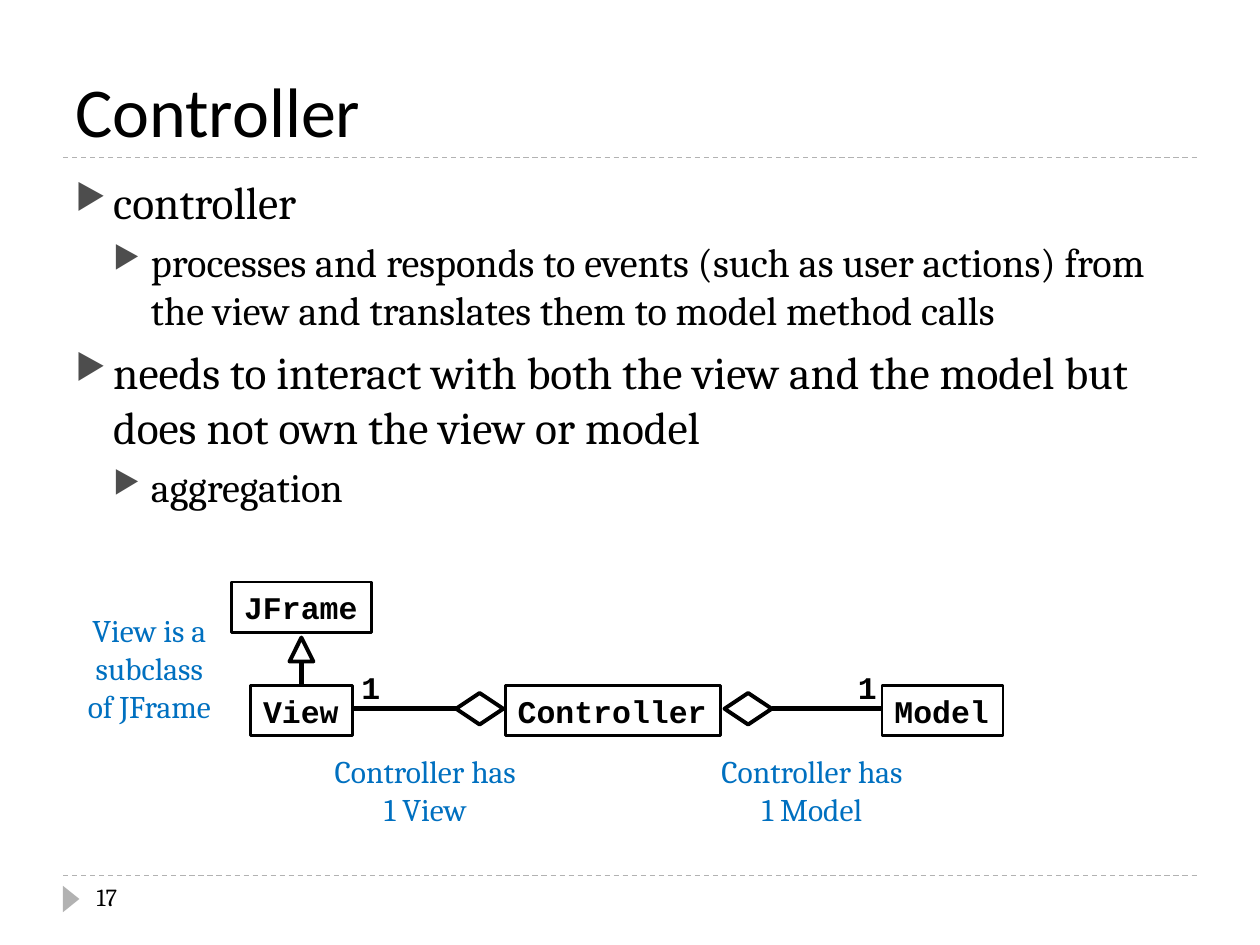
from dataclasses import dataclass

from lxml.etree import SubElement
from pptx import Presentation
from pptx.dml.color import RGBColor
from pptx.enum.dml import MSO_LINE
from pptx.enum.shapes import MSO_CONNECTOR, MSO_SHAPE
from pptx.enum.text import MSO_ANCHOR, MSO_AUTO_SIZE, PP_ALIGN
from pptx.oxml.ns import qn
from pptx.util import Pt


@dataclass(frozen=True)
class Theme:
    ink: str = "000000"
    paper: str = "FFFFFF"
    rule: str = "B2B2B2"
    bullet: str = "4D4D4D"
    note: str = "0070C0"
    heading_font: str = "Calibri"
    body_font: str = "Cambria"
    code_font: str = "Courier New"
    title_size: float = 40
    level_sizes: tuple = (26, 23)
    level_gaps: tuple = (6, 5)
    diagram_size: float = 18
    number_size: float = 14


@dataclass(frozen=True)
class Area:
    left: float
    top: float
    width: float
    height: float

    def lengths(self) -> list:
        return [Pt(value) for value in (self.left, self.top, self.width, self.height)]


@dataclass(frozen=True)
class Label:
    text: str
    area: Area


THEME = Theme()
INDENT = 21.6
BOX_TOP, BOX_HEIGHT = 391.7, 28.8
LINK_Y = 405
DIAMOND_WIDTH, DIAMOND_HEIGHT = 27, 18

BULLETS = [
    (0, "controller"),
    (1, "processes and responds to events (such as user actions) from "
        "the view and translates them to model method calls"),
    (0, "needs to interact with both the view and the model but "
        "does not own the view or model"),
    (1, "aggregation"),
]
CLASSES = [
    Label("JFrame", Area(132.4, 332.6, 80, BOX_HEIGHT)),
    Label("View", Area(143.2, BOX_TOP, 58.3, BOX_HEIGHT)),
    Label("Controller", Area(288.7, BOX_TOP, 123.1, BOX_HEIGHT)),
    Label("Model", Area(504, BOX_TOP, 69.1, BOX_HEIGHT)),
]
COUNTS = [Label("1", Area(left, 378, 25.2, BOX_HEIGHT)) for left in (199.4, 483.1)]
NOTES = [
    Label("View is a\nsubclass\nof JFrame", Area(40.3, 345.6, 90, 72.7)),
    Label("Controller has\n1 View", Area(180, 426.2, 126, 51.1)),
    Label("Controller has\n1 Model", Area(401, 426.2, 126, 51.1)),
]
# Diamond left edge, then the ends of its line
LINKS = [(260.6, 260.6, 202.3), (414, 441, 504)]


def write(para, text: str, *, size: float, font: str = THEME.body_font,
          color: str = THEME.ink, bold: bool = False, align=PP_ALIGN.LEFT) -> None:
    para.alignment = align
    for index, line in enumerate(text.split("\n")):
        if index:
            para.add_line_break()
        span = para.add_run()
        span.text = line
        span.font.size = Pt(size)
        span.font.name = font
        span.font.bold = bold
        span.font.color.rgb = RGBColor.from_string(color)


def add_text(page, area: Area, text: str, *, fit: bool = False,
             anchor=MSO_ANCHOR.TOP, **style) -> None:
    frame = page.shapes.add_textbox(*area.lengths()).text_frame
    frame.word_wrap = not fit
    frame.auto_size = MSO_AUTO_SIZE.SHAPE_TO_FIT_TEXT if fit else MSO_AUTO_SIZE.NONE
    frame.vertical_anchor = anchor
    write(frame.paragraphs[0], text, **style)


def add_figure(page, kind, area: Area, *, fill: str = "", line: str = "",
               weight: float = 0):
    figure = page.shapes.add_shape(kind, *area.lengths())
    figure.shadow.inherit = False
    if fill:
        figure.fill.solid()
        figure.fill.fore_color.rgb = RGBColor.from_string(fill)
    else:
        figure.fill.background()
    if line:
        figure.line.color.rgb = RGBColor.from_string(line)
        figure.line.width = Pt(weight)
    else:
        figure.line.fill.background()
    return figure


def add_line(page, start: tuple, end: tuple, *, color: str = THEME.ink,
             weight: float = 3, dash=None) -> None:
    line = page.shapes.add_connector(
        MSO_CONNECTOR.STRAIGHT, *[Pt(value) for value in start + end])
    line.line.color.rgb = RGBColor.from_string(color)
    line.line.width = Pt(weight)
    if dash:
        line.line.dash_style = dash
    SubElement(line._element.spPr, qn("a:effectLst"))


def add_class(page, label: Label) -> None:
    box = add_figure(page, MSO_SHAPE.RECTANGLE, label.area, line=THEME.ink, weight=1.5)
    frame = box.text_frame
    frame.word_wrap = False
    frame.auto_size = MSO_AUTO_SIZE.SHAPE_TO_FIT_TEXT
    frame.vertical_anchor = MSO_ANCHOR.TOP
    write(frame.paragraphs[0], label.text, size=THEME.diagram_size,
          font=THEME.code_font, bold=True)


def add_bullets(page, area: Area, items: list) -> None:
    frame = page.shapes.add_textbox(*area.lengths()).text_frame
    frame.word_wrap = True
    for index, (level, text) in enumerate(items):
        para = frame.add_paragraph() if index else frame.paragraphs[0]
        para.level = level
        para.space_before = Pt(THEME.level_gaps[level])
        write(para, text, size=THEME.level_sizes[level])
        marks = para._p.get_or_add_pPr()
        marks.set("marL", str(Pt(INDENT * (level + 1))))
        marks.set("indent", str(Pt(-INDENT)))
        SubElement(SubElement(marks, qn("a:buClr")), qn("a:srgbClr"), val=THEME.bullet)
        SubElement(marks, qn("a:buSzPct"), val="76000")
        SubElement(marks, qn("a:buChar"), char="▶")


def main() -> None:
    deck = Presentation()
    deck.slide_width, deck.slide_height = Pt(720), Pt(540)
    page = deck.slides.add_slide(deck.slide_layouts[6])

    # Rules and page marker
    for height in (500.4, 90):
        add_line(page, (36, height), (684, height), color=THEME.rule,
                 weight=0.75, dash=MSO_LINE.DASH)
    marker = add_figure(page, MSO_SHAPE.ISOSCELES_TRIANGLE,
                        Area(33.1, 509, 15.1, 9.4), fill=THEME.rule)
    marker.rotation = 90

    # Title, bullets and page number
    add_text(page, Area(36, 12.2, 648, 77.8), "Controller", anchor=MSO_ANCHOR.BOTTOM,
             size=THEME.title_size, font=THEME.heading_font)
    add_bullets(page, Area(36, 95.8, 648, 388.8), BULLETS)
    add_text(page, Area(48.2, 500.4, 156.2, 28.8), "17", size=THEME.number_size)

    # Classes and inheritance arrow
    for label in CLASSES:
        add_class(page, label)
    add_figure(page, MSO_SHAPE.ISOSCELES_TRIANGLE, Area(165.4, 364.3, 13.7, 13.7),
               line=THEME.ink, weight=2.25)
    add_line(page, (172.2, BOX_TOP), (172.2, 378))

    # Aggregation links
    for left, start, end in LINKS:
        add_figure(page, MSO_SHAPE.DIAMOND,
                   Area(left, LINK_Y - DIAMOND_HEIGHT / 2, DIAMOND_WIDTH, DIAMOND_HEIGHT),
                   fill=THEME.paper, line=THEME.ink, weight=2.25)
        add_line(page, (start, LINK_Y), (end, LINK_Y))

    # Multiplicities and notes
    for label in COUNTS:
        add_text(page, label.area, label.text, fit=True, size=THEME.diagram_size,
                 font=THEME.code_font, bold=True)
    for label in NOTES:
        add_text(page, label.area, label.text, fit=True, size=THEME.diagram_size,
                 color=THEME.note, align=PP_ALIGN.CENTER)

    deck.save("out.pptx")


if __name__ == "__main__":
    main()
